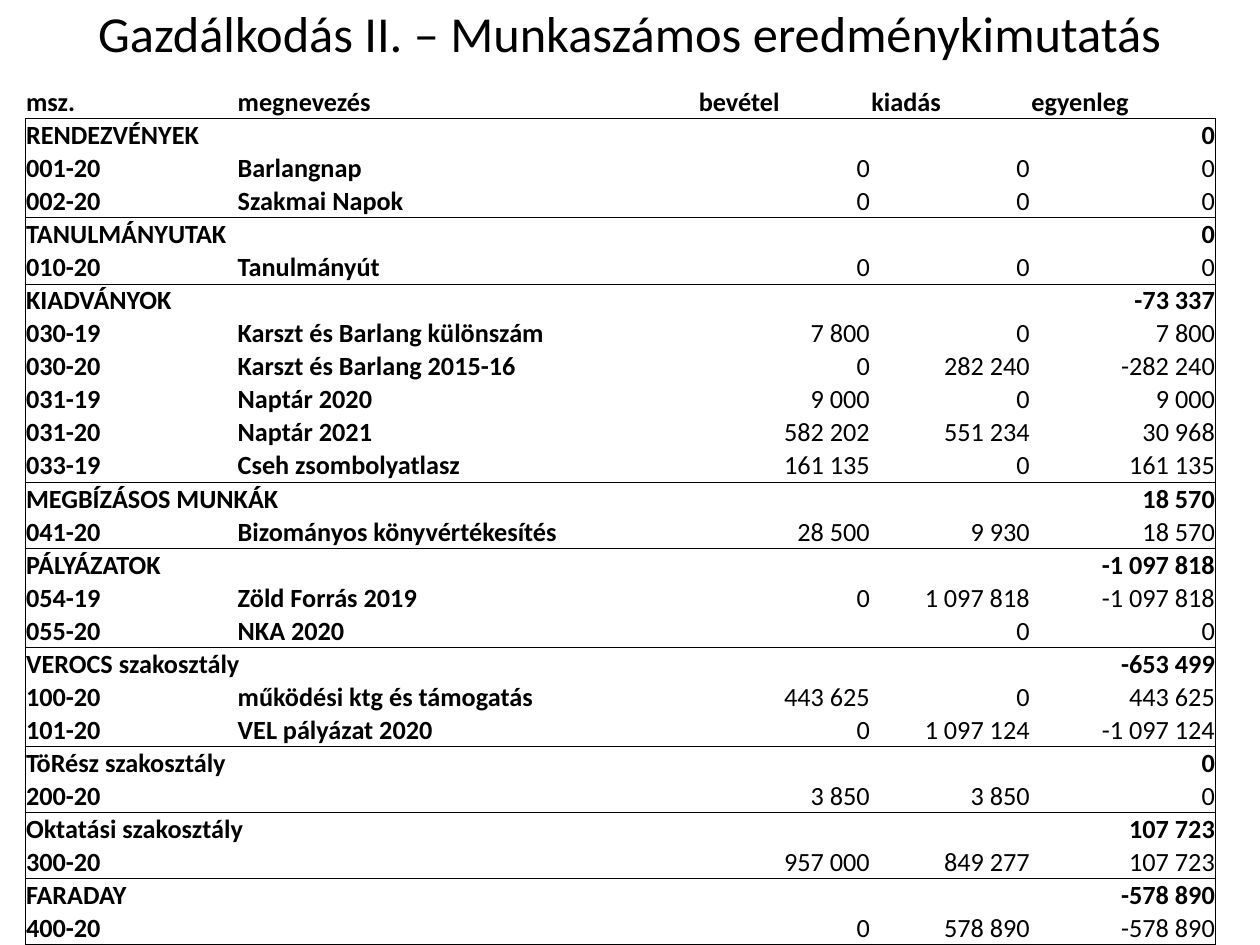
from lxml import etree
from pptx import Presentation
from pptx.dml.color import RGBColor
from pptx.enum import text
from pptx.oxml.ns import qn
from pptx.util import Inches, Pt

COLORS = {"ink": "000000"}
FONT = "Calibri"
NO_STYLE = "{2D5ABB26-0587-4C30-8999-92F81FD0307C}"

TITLE = "Gazdálkodás II. – Munkaszámos eredménykimutatás"
HEADINGS = ("msz.", "megnevezés", "bevétel", "kiadás", "egyenleg")
WIDTHS = (1.68, 3.66, 1.37, 1.27, 1.47)
ROW_HEIGHT = 0.21
CELL_MARGIN = Pt(0.5)

# Section name, then its jobs: number, name, income, expense
SECTIONS = [
    ("RENDEZVÉNYEK", [("001-20", "Barlangnap", 0, 0),
                      ("002-20", "Szakmai Napok", 0, 0)]),
    ("TANULMÁNYUTAK", [("010-20", "Tanulmányút", 0, 0)]),
    ("KIADVÁNYOK", [("030-19", "Karszt és Barlang különszám", 7800, 0),
                    ("030-20", "Karszt és Barlang 2015-16", 0, 282240),
                    ("031-19", "Naptár 2020", 9000, 0),
                    ("031-20", "Naptár 2021", 582202, 551234),
                    ("033-19", "Cseh zsombolyatlasz", 161135, 0)]),
    ("MEGBÍZÁSOS MUNKÁK", [("041-20", "Bizományos könyvértékesítés", 28500, 9930)]),
    ("PÁLYÁZATOK", [("054-19", "Zöld Forrás 2019", 0, 1097818),
                    ("055-20", "NKA 2020", None, 0)]),
    ("VEROCS szakosztály", [("100-20", "működési ktg és támogatás", 443625, 0),
                            ("101-20", "VEL pályázat 2020", 0, 1097124)]),
    ("TöRész szakosztály", [("200-20", "", 3850, 3850)]),
    ("Oktatási szakosztály", [("300-20", "", 957000, 849277)]),
    ("FARADAY", [("400-20", "", 0, 578890)]),
]
UNMERGED = {"PÁLYÁZATOK", "FARADAY"}


def amount(value):
    return "" if value is None else f"{value:,}".replace(",", " ")


def balance(job):
    return (job[2] or 0) - (job[3] or 0)


def write(frame, words, size=15, bold=False, align=text.PP_ALIGN.LEFT):
    para = frame.paragraphs[0]
    para.alignment = align
    if not words:
        # An empty cell keeps the row height of its neighbours
        para._p.get_or_add_endParaRPr().set("sz", str(size * 100))
        return
    span = para.add_run()
    span.text = words
    span.font.name = FONT
    span.font.size = Pt(size)
    span.font.bold = bold
    span.font.color.rgb = RGBColor.from_string(COLORS["ink"])


def draw_borders(cell, sides):
    """Rule the sides named by letters out of L, R, T and B; clear the others."""
    properties = cell._tc.get_or_add_tcPr()
    for side in "LRTB":
        line = etree.SubElement(properties, qn(f"a:ln{side}"), w=str(Pt(0.5)))
        if side in sides:
            fill = etree.SubElement(line, qn("a:solidFill"))
            etree.SubElement(fill, qn("a:srgbClr"), val=COLORS["ink"])
        else:
            etree.SubElement(line, qn("a:noFill"))


def fill_row(table, index, words, bold_columns, right_columns=(), top=False, bottom=False, framed=True):
    last = len(WIDTHS) - 1
    for column, word in enumerate(words):
        cell = table.cell(index, column)
        cell.margin_left = cell.margin_right = cell.margin_top = CELL_MARGIN
        cell.margin_bottom = 0
        cell.vertical_anchor = text.MSO_ANCHOR.BOTTOM
        sides = "T" * top + "B" * bottom
        if framed:
            sides += {0: "L", last: "R"}.get(column, "")
        draw_borders(cell, sides)
        cell.fill.background()
        align = text.PP_ALIGN.RIGHT if column in right_columns else text.PP_ALIGN.LEFT
        write(cell.text_frame, word, bold=column in bold_columns, align=align)


def add_statement(page):
    count = 1 + sum(1 + len(jobs) for _, jobs in SECTIONS)
    holder = page.shapes.add_table(count, len(WIDTHS), Inches(0.2), Inches(0.68),
                                   Inches(9.45), Inches(6.68))
    table = holder.table
    table.first_row = table.horz_banding = False
    table._tbl.tblPr.find(qn("a:tableStyleId")).text = NO_STYLE
    for column, width in zip(table.columns, WIDTHS):
        column.width = Inches(width)
    for row in table.rows:
        row.height = Inches(ROW_HEIGHT)
    holder.height = Inches(6.68)

    fill_row(table, 0, HEADINGS, range(5), bottom=True, framed=False)
    index = 1
    for name, jobs in SECTIONS:
        total = amount(sum(map(balance, jobs)))
        fill_row(table, index, (name, "", "", "", total), range(5), (4,), top=True)
        if name not in UNMERGED:
            table.cell(index, 0).merge(table.cell(index, 1))
        index += 1
        for job in jobs:
            words = job[:2] + tuple(map(amount, (*job[2:], balance(job))))
            fill_row(table, index, words, (0, 1), (2, 3, 4), bottom=job is jobs[-1])
            index += 1


def main():
    deck = Presentation()
    deck.slide_width, deck.slide_height = Inches(10), Inches(7.5)
    page = deck.slides.add_slide(deck.slide_layouts[5])
    title = page.shapes.title
    title.left, title.top = Inches(0.5), 0
    title.width, title.height = Inches(9), Inches(0.52)
    title.text_frame.vertical_anchor = text.MSO_ANCHOR.MIDDLE
    write(title.text_frame, TITLE, size=28.8, align=text.PP_ALIGN.CENTER)
    add_statement(page)
    deck.save("out.pptx")


if __name__ == "__main__":
    main()
